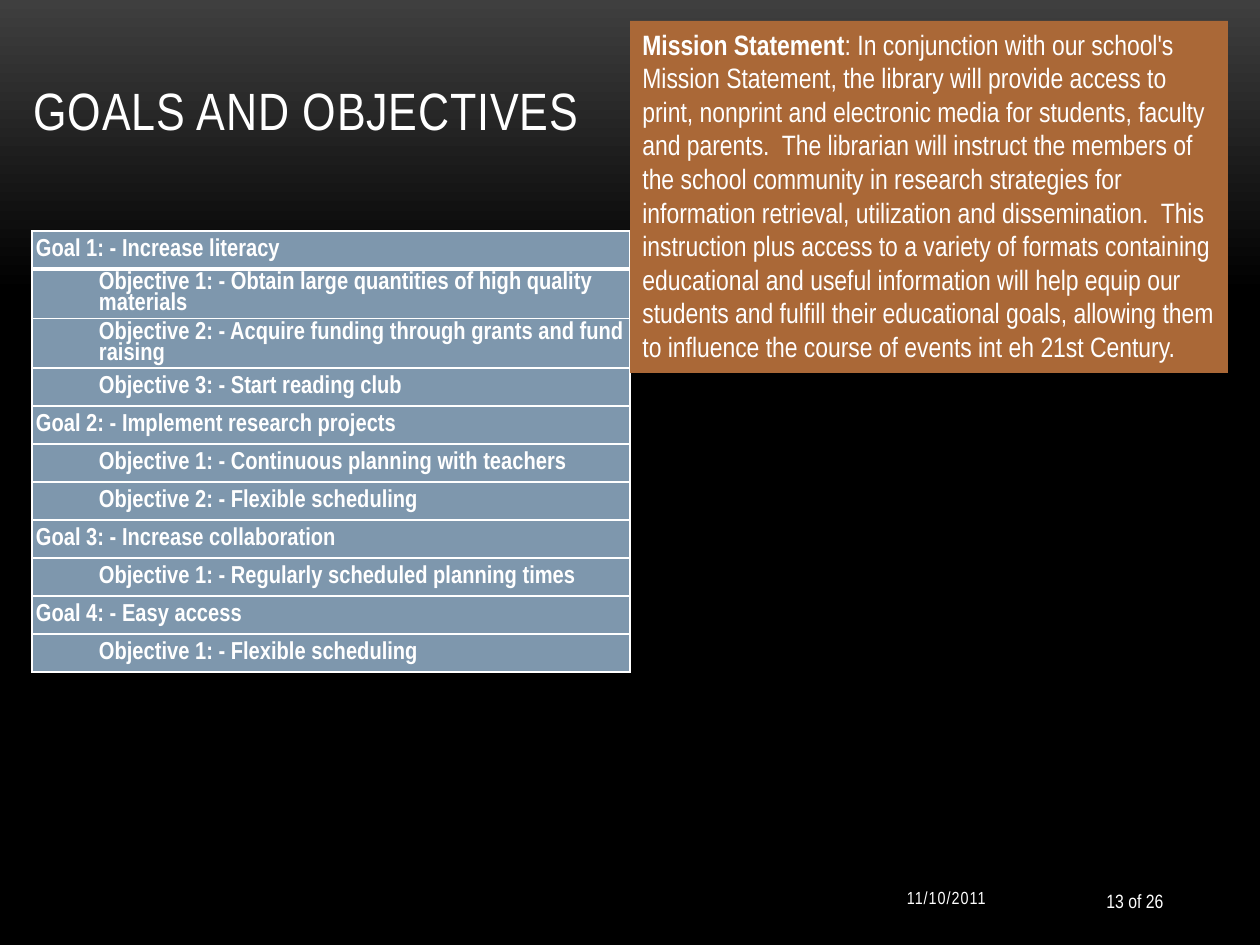
from dataclasses import dataclass

from lxml.etree import SubElement
from pptx import Presentation
from pptx.dml.color import RGBColor
from pptx.enum.shapes import MSO_SHAPE
from pptx.enum.text import MSO_ANCHOR, MSO_AUTO_SIZE, PP_ALIGN
from pptx.oxml.ns import qn
from pptx.util import Emu, Pt


@dataclass(frozen=True)
class Theme:
    """Colours, font and type sizes of the slide."""
    font: str = "Arial Narrow"
    text: str = "FFFFFF"
    glow: str = "3F3F3F"
    ground: str = "000000"
    goal: str = "7E97AD"
    mission: str = "AA6837"
    title_size: int = 30
    mission_size: int = 16
    goal_size: int = 14
    page_size: int = 11
    date_size: int = 10


THEME = Theme()
EMU_PER_PX = 914400 / 126
GOALS = {
    "Goal 1: - Increase literacy": [
        "Objective 1: - Obtain large quantities of high quality materials",
        "Objective 2: - Acquire funding through grants and fund raising",
        "Objective 3: - Start reading club",
    ],
    "Goal 2: - Implement research projects": [
        "Objective 1: - Continuous planning with teachers",
        "Objective 2: - Flexible scheduling",
    ],
    "Goal 3: - Increase collaboration": [
        "Objective 1: - Regularly scheduled planning times",
    ],
    "Goal 4: - Easy access": ["Objective 1: - Flexible scheduling"],
}
MISSION = (
    ": In conjunction with our school's Mission Statement, the library will "
    "provide access to print, nonprint and electronic media for students, "
    "faculty and parents.  The librarian will instruct the members of the "
    "school community in research strategies for information retrieval, "
    "utilization and dissemination.  This instruction plus access to a variety "
    "of formats containing educational and useful information will help equip "
    "our students and fulfill their educational goals, allowing them to "
    "influence the course of events int eh 21st Century."
)


def px(length):
    """Turn px into EMU."""
    return Emu(round(length * EMU_PER_PX))


def apply_format(target, values):
    """Set each attribute named in a dict of format values."""
    for name, value in values.items():
        setattr(target, name, value)


def place(part, box):
    """Move a shape to a px box."""
    apply_format(part, dict(zip(("left", "top", "width", "height"), map(px, box))))


def write(paragraph, words, size, bold=False, spacing=0):
    """Add a run of themed text."""
    run = paragraph.add_run()
    run.text = words
    apply_format(run.font, {"name": THEME.font, "size": Pt(size), "bold": bold})
    run.font.color.rgb = RGBColor.from_string(THEME.text)
    if spacing:
        run.font._element.set("spc", str(spacing))


def paint_background(slide):
    """Fade the slide from grey at the top to black."""
    fill = slide.background.fill
    fill.gradient()
    fill.gradient_angle = 270
    for stop, (position, colour) in zip(
        fill.gradient_stops, ((0, THEME.glow), (0.31, THEME.ground))
    ):
        stop.position = position
        stop.color.rgb = RGBColor.from_string(colour)


def add_title(slide, box):
    """Place and format the title."""
    title = slide.shapes.title
    place(title, box)
    apply_format(title.text_frame, {
        "vertical_anchor": MSO_ANCHOR.BOTTOM,
        "auto_size": MSO_AUTO_SIZE.NONE,
        "word_wrap": True,
    })
    heading = title.text_frame.paragraphs[0]
    heading.alignment = PP_ALIGN.LEFT
    write(heading, "GOALS AND OBJECTIVES", THEME.title_size, spacing=50)


def add_border(cell, side, width):
    """Draw one side of a cell."""
    line = SubElement(cell._tc.get_or_add_tcPr(), qn(f"a:ln{side}"), w=str(Pt(width)))
    fill = SubElement(line, qn("a:solidFill"))
    SubElement(fill, qn("a:srgbClr"), val=THEME.text)


def add_goals(slide, box, row_height):
    """List the goals with their objectives indented below them."""
    entries = [
        (words, level)
        for goal, objectives in GOALS.items()
        for words, level in [(goal, 0), *((item, 1) for item in objectives)]
    ]
    left, top, width = box
    frame = (left, top, width, row_height * len(entries))
    goals = slide.shapes.add_table(len(entries), 1, *map(px, frame)).table
    apply_format(goals, {"first_row": False, "horz_banding": False})
    for index, (words, level) in enumerate(entries):
        goals.rows[index].height = px(row_height)
        cell = goals.cell(index, 0)
        margins = {f"margin_{side}": px(4) for side in ("left", "right", "top", "bottom")}
        apply_format(cell, {**margins, "vertical_anchor": MSO_ANCHOR.MIDDLE})
        widths = {"L": 1, "R": 1, "T": 3 if index == 1 else 1, "B": 3 if index == 0 else 1}
        for side, weight in widths.items():
            add_border(cell, side, weight)
        cell.fill.solid()
        cell.fill.fore_color.rgb = RGBColor.from_string(THEME.goal)
        entry = cell.text_frame.paragraphs[0]
        apply_format(entry, {"level": level, "line_spacing": 0.9})
        entry._p.get_or_add_pPr().set("marL", str(px(63 * level)))
        write(entry, words, THEME.goal_size, bold=True)


def add_mission(slide, box):
    """Set the mission statement in a filled panel."""
    panel = slide.shapes.add_shape(MSO_SHAPE.RECTANGLE, *map(px, box))
    panel.shadow.inherit = False
    panel.fill.solid()
    panel.fill.fore_color.rgb = RGBColor.from_string(THEME.mission)
    panel.line.fill.background()
    apply_format(panel.text_frame, {
        "word_wrap": True,
        "vertical_anchor": MSO_ANCHOR.TOP,
        "auto_size": MSO_AUTO_SIZE.SHAPE_TO_FIT_TEXT,
    })
    statement = panel.text_frame.paragraphs[0]
    statement.alignment = PP_ALIGN.LEFT
    write(statement, "Mission Statement", THEME.mission_size, bold=True)
    write(statement, MISSION, THEME.mission_size)


def add_footer(slide, box, words, size, spacing=0):
    """Write a right-aligned footer entry."""
    footer = slide.shapes.add_textbox(*map(px, box)).text_frame
    apply_format(footer, {"word_wrap": True, "vertical_anchor": MSO_ANCHOR.MIDDLE})
    footer.paragraphs[0].alignment = PP_ALIGN.RIGHT
    write(footer.paragraphs[0], words, size, spacing=spacing)


def main():
    """Build and save the slide."""
    deck = Presentation()
    apply_format(deck, {"slide_width": px(1260), "slide_height": px(945)})
    slide = deck.slides.add_slide(deck.slide_layouts[5])
    paint_background(slide)
    add_title(slide, (21, -10, 1092, 157))
    add_goals(slide, (32, 231, 598), 38)
    add_mission(slide, (630, 21, 598, 352))
    add_footer(slide, (1040, 876, 136, 50), "13 of 26", THEME.page_size)
    add_footer(slide, (788, 873, 210, 50), "11/10/2011", THEME.date_size, spacing=60)
    deck.save("out.pptx")


if __name__ == "__main__":
    main()
